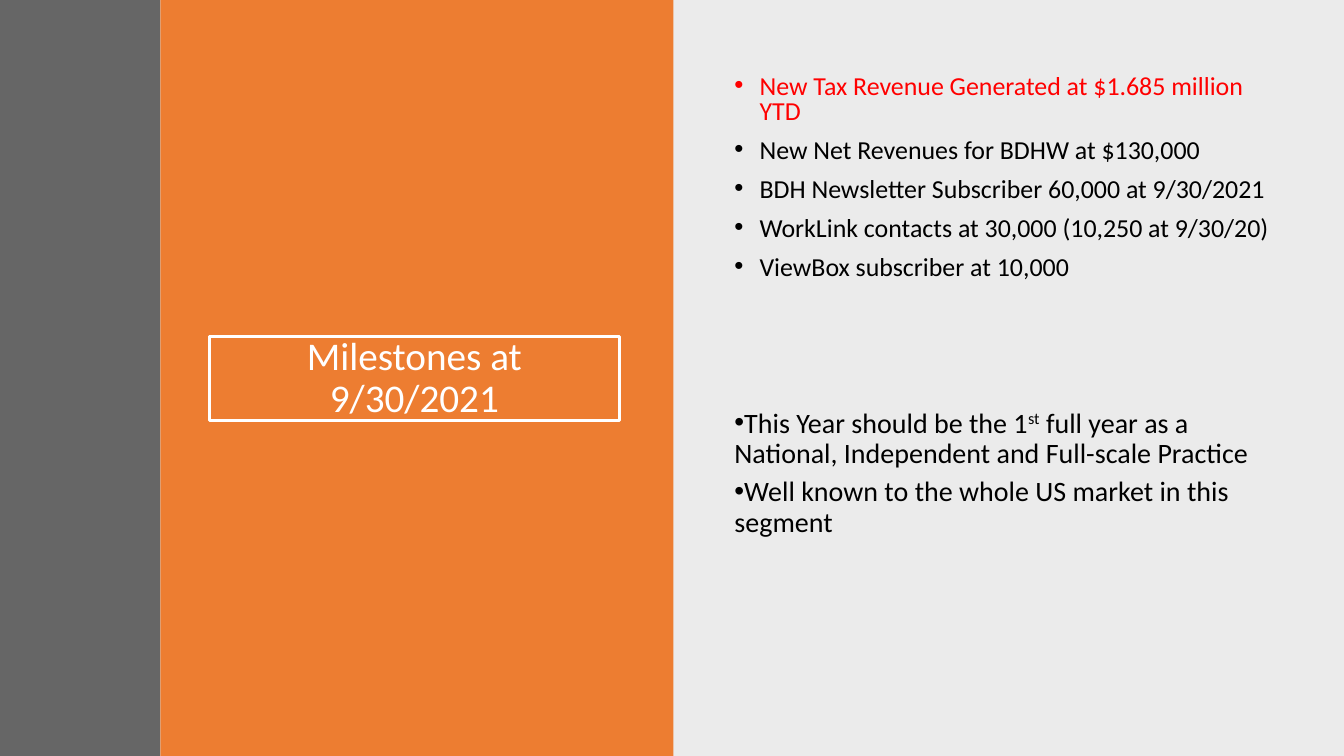
from lxml.etree import SubElement
from pptx import Presentation
from pptx.dml.color import RGBColor
from pptx.enum.shapes import MSO_SHAPE as Shape
from pptx.enum.text import MSO_ANCHOR as Anchor, PP_ALIGN as Align
from pptx.oxml.ns import qn
from pptx.util import Pt

COLORS = {"black": "000000", "charcoal": "404040", "orange": "ED7D31",
          "white": "FFFFFF", "red": "FF0000"}
FONT = "Calibri"
HANGING = -18


def add_run(paragraph, text, size, color):
    run = paragraph.add_run()
    run.text = text
    run.font.name = FONT
    run.font.size = Pt(size)
    run.font.color.rgb = RGBColor.from_string(COLORS[color])
    return run


def add_bullet(text_frame, position, margin, line_spacing):
    """Return a bulleted paragraph, using the frame's first one at position 0."""
    paragraph = text_frame.add_paragraph() if position else text_frame.paragraphs[0]
    paragraph.line_spacing = line_spacing
    properties = paragraph._p.get_or_add_pPr()
    properties.set("marL", str(Pt(margin)))
    properties.set("indent", str(Pt(HANGING)))
    SubElement(properties, qn("a:buFont"), typeface="Arial")
    SubElement(properties, qn("a:buChar"), char="•")
    return paragraph


presentation = Presentation()
presentation.slide_width, presentation.slide_height = Pt(960), Pt(540)
slide = presentation.slides.add_slide(presentation.slide_layouts[6])

# Full-height panels: left, width, color, opacity in percent
panels = [(480, 480, "black", 8), (114.5, 366.5, "orange", 100), (0, 114.5, "charcoal", 80)]
for left, width, color, opacity in panels:
    panel = slide.shapes.add_shape(Shape.RECTANGLE, Pt(left), 0, Pt(width), Pt(540))
    panel.shadow.inherit = False
    panel.line.fill.background()
    panel.fill.solid()
    panel.fill.fore_color.rgb = RGBColor.from_string(COLORS[color])
    if opacity < 100:
        fill_color = panel._element.spPr.find(qn("a:solidFill"))[0]
        SubElement(fill_color, qn("a:alpha"), val=str(opacity * 1000))

# Title
title = slide.shapes.add_textbox(Pt(149.5), Pt(240.5), Pt(293), Pt(60))
title.line.color.rgb = RGBColor.from_string(COLORS["white"])
title.line.width = Pt(2)
title.text_frame.word_wrap = True
title.text_frame.vertical_anchor = Anchor.MIDDLE
heading = title.text_frame.paragraphs[0]
heading.alignment = Align.CENTER
heading.line_spacing = 0.9
add_run(heading, "Milestones at 9/30/2021", 28, "white")

# The two lists share a column
milestones_frame, outlook_frame = [
    slide.shapes.add_textbox(Pt(517.5), Pt(top), Pt(398), Pt(201)).text_frame
    for top in (50.5, 288.5)]
milestones_frame.word_wrap = outlook_frame.word_wrap = True

milestones = [
    ("New Tax Revenue Generated at $1.685 million YTD", "red"),
    ("New Net Revenues for BDHW at $130,000", "black"),
    ("BDH Newsletter Subscriber 60,000 at 9/30/2021", "black"),
    ("WorkLink contacts at 30,000 (10,250 at 9/30/20)", "black"),
    ("ViewBox subscriber at 10,000", "black"),
]
for position, (text, color) in enumerate(milestones):
    paragraph = add_bullet(milestones_frame, position, 18, 0.8)
    paragraph.space_before = Pt(10)
    add_run(paragraph, text, 18.5, color)

# Each run: text, baseline shift in percent
outlook = [
    [("This Year should be the 1", 0), ("st", 30),
     (" full year as a National, Independent and Full-scale Practice", 0)],
    [("Well known to the whole US market in this segment", 0)],
]
for position, runs in enumerate(outlook):
    paragraph = add_bullet(outlook_frame, position, 0, 0.9)
    paragraph.space_after = Pt(6)
    for text, baseline in runs:
        run = add_run(paragraph, text, 20, "black")
        if baseline:
            run.font._element.set("baseline", str(baseline * 1000))

presentation.save("out.pptx")
